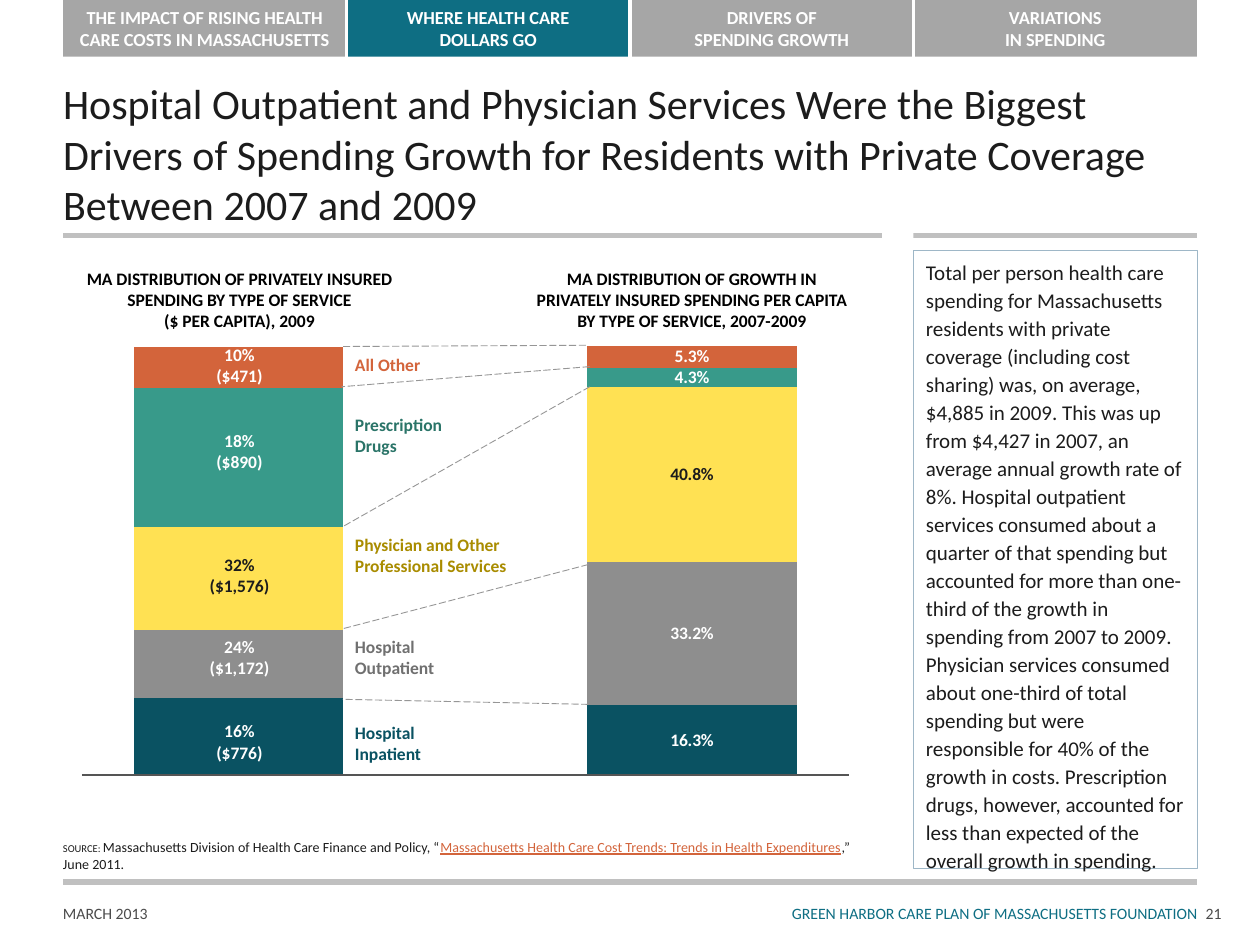
from dataclasses import dataclass

from lxml import etree
from pptx import Presentation
from pptx.chart.data import CategoryChartData
from pptx.dml.color import RGBColor
from pptx.enum.chart import XL_CHART_TYPE
from pptx.enum.dml import MSO_LINE
from pptx.enum.shapes import MSO_CONNECTOR, MSO_SHAPE
from pptx.enum.text import MSO_ANCHOR, MSO_AUTO_SIZE, PP_ALIGN
from pptx.oxml import parse_xml
from pptx.oxml.ns import nsdecls, qn
from pptx.util import Pt

LEFT, CENTER, RIGHT = PP_ALIGN.LEFT, PP_ALIGN.CENTER, PP_ALIGN.RIGHT
TOP, BOTTOM = MSO_ANCHOR.TOP, MSO_ANCHOR.BOTTOM
GROW, FIXED = MSO_AUTO_SIZE.SHAPE_TO_FIT_TEXT, MSO_AUTO_SIZE.NONE
LONG_DASH = MSO_LINE.LONG_DASH
FONT = "Calibri"
COLORS = {
    "white": "FFFFFF", "black": "000000", "ink": "1C1C1C", "footer": "4B4B4B",
    "rule": "C0C0C0", "tab": "A6A6A6", "active": "0E6E83", "dash": "969696",
    "baseline": "555555", "border": "9EB7C7",
    "inpatient": "0A5262", "outpatient": "8E8E8E", "physician": "FFE153",
    "drugs": "389A8A", "other": "D3643B",
    "outpatient text": "707070", "physician text": "A98C00", "drugs text": "2A7468",
}
MARGIN, TAB_WIDTH, TAB_HEIGHT = 36, 162, 32.4


@dataclass
class Label:
    text: str
    left: float
    top: float
    width: float
    height: float
    color: str
    size: float = 10
    bold: bool = True
    align: PP_ALIGN = LEFT
    side_inset: float = 0
    end_inset: float = 3.6
    wrap: bool = True
    auto_size: MSO_AUTO_SIZE = FIXED


@dataclass
class Service:
    color: str
    label_color: str
    label: str
    label_top: float
    share: str
    share_top: float
    bar_value: float
    growth: float


@dataclass
class Line:
    start: tuple[float, float]
    end: tuple[float, float]
    color: str
    width: float
    dash: MSO_LINE | None = None


SERVICES = [
    Service("inpatient", "inpatient", "Hospital \vInpatient", 409, "16%\n($776)", 408.2, 56, 0.163),
    Service("outpatient", "outpatient text", "Hospital \vOutpatient", 360, "24%\n($1,172)", 360, 49, 0.332),
    Service("physician", "physician text", "Physician and Other Professional Services", 301.7,
            "32%\n($1,576)", 313.2, 74, 0.408),
    Service("drugs", "drugs text", "Prescription \vDrugs", 233.3, "18%\n($890)", 241.9, 100, 0.043),
    Service("other", "other", "All Other", 198.7, "10%\n($471)", 193, 30, 0.053),
]
TABS = [
    "THE IMPACT OF RISING HEALTH CARE COSTS IN MASSACHUSETTS",
    "WHERE HEALTH CARE\vDOLLARS GO",
    "DRIVERS OF\vSPENDING GROWTH",
    "VARIATIONS\vIN SPENDING",
]
ACTIVE_TAB = 1
RULES = [Line((MARGIN, y), (684, y), "rule", 3) for y in (134.6, 504)]
TAB_DIVIDERS = [Line((x, 0), (x, TAB_HEIGHT), "white", 2)
                for x in (MARGIN + TAB_WIDTH * index for index in (1, 2, 3))]
LINKS = [Line(start, end, "dash", 0.5, LONG_DASH) for start, end in (
    ((334.8, 197.3), (195.1, 198)),
    ((336.2, 402.5), (195.8, 399.6)),
    ((336.2, 322.6), (195.8, 359.3)),
    ((337, 221), (195.8, 301)),
    ((337, 209.5), (195.1, 221)),
)]
BASELINE = Line((46.8, 442.8), (485.3, 442.8), "baseline", 1.5)
CAPTIONS = [
    Label("MA DISTRIBUTION OF PRIVATELY INSURED\vSPENDING BY TYPE OF SERVICE\v($ PER CAPITA), 2009",
          35.3, 149.8, 203, 19.4, "black", align=CENTER, wrap=False),
    Label("MA DISTRIBUTION OF GROWTH IN\vPRIVATELY INSURED SPENDING PER CAPITA\v"
          "BY TYPE OF SERVICE, 2007-2009",
          290.9, 149.8, 208.8, 19.4, "black", align=CENTER, wrap=False),
]
FOOTERS = [
    Label("MARCH 2013", MARGIN, 516.2, 72, 23, "footer", 9, False, end_inset=0),
    Label("GREEN HARBOR CARE PLAN OF MASSACHUSETTS FOUNDATION",
          373.7, 516.2, 310.3, 23, "active", 9, False, RIGHT, end_inset=0),
    Label("21", 689, 516.2, 31, 23, "footer", 9, False, end_inset=0),
]
TITLE = ("Hospital Outpatient and Physician Services Were the Biggest Drivers of Spending Growth "
         "for Residents with Private Coverage Between 2007 and 2009")
SIDEBAR = (
    "Total per person health care spending for Massachusetts residents with private coverage "
    "(including cost sharing) was, on average, $4,885 in 2009. This was up from $4,427 in 2007, "
    "an average annual growth rate of 8%. Hospital outpatient services consumed about a quarter "
    "of that spending but accounted for more than one-third of the growth in spending from 2007 "
    "to 2009. Physician services consumed about one-third of total spending but were responsible "
    "for 40% of the growth in costs. Prescription drugs, however, accounted for less than "
    "expected of the overall growth in spending."
)
SOURCE = [
    ("SOURCE: ", 6, "ink", False),
    ("Massachusetts Division of Health Care Finance and Policy, “", 8, "ink", False),
    ("Massachusetts Health Care Cost Trends: Trends in Health Expenditures", 8, "other", True),
    (",” \vJune 2011.", 8, "ink", False),
]


def rgb(name: str) -> RGBColor:
    return RGBColor.from_string(COLORS[name])


def style_font(font, size: float, color: str, bold: bool = False) -> None:
    font.name, font.size, font.bold = FONT, Pt(size), bold
    font.color.rgb = rgb(color)


def set_text(frame, text: str, size: float, color: str, bold: bool = False, align=LEFT) -> None:
    frame.text = text
    for paragraph in frame.paragraphs:
        paragraph.alignment = align
        for run in paragraph.runs:
            style_font(run.font, size, color, bold)


def set_frame(frame, side: float, end: float, anchor=TOP, wrap: bool = True, auto_size=FIXED) -> None:
    frame.margin_left = frame.margin_right = Pt(side)
    frame.margin_top = frame.margin_bottom = Pt(end)
    frame.vertical_anchor, frame.word_wrap, frame.auto_size = anchor, wrap, auto_size


def add_label(slide, label: Label) -> None:
    box = slide.shapes.add_textbox(Pt(label.left), Pt(label.top), Pt(label.width), Pt(label.height))
    set_frame(box.text_frame, label.side_inset, label.end_inset,
              wrap=label.wrap, auto_size=label.auto_size)
    set_text(box.text_frame, label.text, label.size, label.color, label.bold, label.align)


def add_line(slide, line: Line) -> None:
    connector = slide.shapes.add_connector(
        MSO_CONNECTOR.STRAIGHT, *(Pt(value) for value in (*line.start, *line.end)))
    connector.line.color.rgb = rgb(line.color)
    connector.line.width = Pt(line.width)
    if line.dash is not None:
        connector.line.dash_style = line.dash
    etree.SubElement(connector._element.spPr, qn("a:effectLst"))


def add_rectangle(slide, left: float, top: float, width: float, height: float,
                  fill: str | None = None, border: str | None = None):
    shape = slide.shapes.add_shape(MSO_SHAPE.RECTANGLE, Pt(left), Pt(top), Pt(width), Pt(height))
    shape.shadow.inherit = False
    if fill:
        shape.fill.solid()
        shape.fill.fore_color.rgb = rgb(fill)
    else:
        shape.fill.background()
    if border:
        shape.line.color.rgb = rgb(border)
        shape.line.width = Pt(0.25)
    else:
        shape.line.fill.background()
    return shape


def add_stack(slide, left: float, height: float, values: list[float], maximum: float,
              plot_height: float, labelled: bool) -> None:
    """Add a single stacked column whose plot fills plot_height of the frame."""
    data = CategoryChartData()
    data.categories = ["1"]
    for number, value in enumerate(values, 1):
        data.add_series(f"Series {number}", [value])
    chart = slide.shapes.add_chart(XL_CHART_TYPE.COLUMN_STACKED, Pt(left), Pt(197.3),
                                   Pt(201.6), Pt(height), data).chart
    style_font(chart.font, 18, "ink")
    chart.has_legend = chart.has_title = False
    axis = chart.value_axis
    axis.minimum_scale, axis.maximum_scale = 0, maximum
    axis.has_major_gridlines = False
    axis.visible = chart.category_axis.visible = False
    plot = chart.plots[0]
    plot.gap_width, plot.overlap, plot.vary_by_categories = 50, 100, False
    for series, service in zip(plot.series, SERVICES):
        series.format.fill.solid()
        series.format.fill.fore_color.rgb = rgb(service.color)
        if labelled:
            labels = series.data_labels
            labels.show_value = True
            labels.number_format, labels.number_format_is_linked = "0.0%", False
            style_font(labels.font, 10, text_color_on(service), True)
    plot_area = chart._chartSpace.chart.plotArea
    for layout in plot_area.findall(qn("c:layout")):
        plot_area.remove(layout)
    bounds = "".join(f'<c:{tag} val="{value}"/>' for tag, value in (
        ("layoutTarget", "inner"), ("xMode", "edge"), ("yMode", "edge"),
        ("x", 0.055), ("y", 0), ("w", 0.891), ("h", plot_height)))
    plot_area.insert(0, parse_xml(
        f'<c:layout {nsdecls("c")}><c:manualLayout>{bounds}</c:manualLayout></c:layout>'))


def text_color_on(service: Service) -> str:
    return "ink" if service.color == "physician" else "white"


def add_tab(slide, index: int, text: str) -> None:
    tab = add_rectangle(slide, MARGIN + index * TAB_WIDTH, 0, TAB_WIDTH, TAB_HEIGHT,
                        "active" if index == ACTIVE_TAB else "tab")
    set_frame(tab.text_frame, 3.6, 3.6, BOTTOM)
    set_text(tab.text_frame, text, 10.5, "white", True, CENTER)


def add_title(slide) -> None:
    title = slide.shapes.title
    title.left, title.top, title.width, title.height = Pt(MARGIN), Pt(72), Pt(648), Pt(62.6)
    set_frame(title.text_frame, 0, 3.6, BOTTOM)
    set_text(title.text_frame, TITLE, 24, "ink")


def add_sidebar(slide) -> None:
    sidebar = add_rectangle(slide, 522, 143.3, 162, 352.8, border="border")
    set_frame(sidebar.text_frame, 7.2, 3.6)
    set_text(sidebar.text_frame, SIDEBAR, 12, "ink")
    paragraph = sidebar.text_frame.paragraphs[0]
    paragraph.line_spacing, paragraph.space_before = Pt(16), Pt(6)


def add_source(slide) -> None:
    frame = slide.shapes.add_textbox(Pt(MARGIN), Pt(475.2), Pt(475.2), Pt(26.6)).text_frame
    set_frame(frame, 0, 3.6, BOTTOM, auto_size=GROW)
    paragraph = frame.paragraphs[0]
    for text, size, color, underline in SOURCE:
        for position, part in enumerate(text.split("\v")):
            if position:
                paragraph.add_line_break()
            run = paragraph.add_run()
            run.text = part
            style_font(run.font, size, color)
            run.font.underline = underline


def main() -> None:
    presentation = Presentation()
    presentation.slide_width, presentation.slide_height = Pt(720), Pt(540)
    slide = presentation.slides.add_slide(presentation.slide_layouts[5])
    add_title(slide)
    for index, text in enumerate(TABS):
        add_tab(slide, index, text)
    for line in RULES + TAB_DIVIDERS:
        add_line(slide, line)
    add_rectangle(slide, 504, 128.9, 18, 9.4, "white")
    add_stack(slide, 294.5, 270.7, [service.growth for service in SERVICES], 1, 0.908, True)
    add_stack(slide, 35.3, 257, [service.bar_value for service in SERVICES], 310, 0.957, False)
    for line in LINKS + [BASELINE]:
        add_line(slide, line)
    for label in CAPTIONS + FOOTERS:
        add_label(slide, label)
    for service in SERVICES:
        add_label(slide, Label(service.share, 107.3, service.share_top, 59, 31.7,
                               text_color_on(service), align=CENTER, auto_size=GROW))
        add_label(slide, Label(service.label, 195.8, service.label_top, 139, 31.7,
                               service.label_color, side_inset=7.2, auto_size=GROW))
    add_sidebar(slide)
    add_source(slide)
    presentation.save("out.pptx")


if __name__ == "__main__":
    main()
